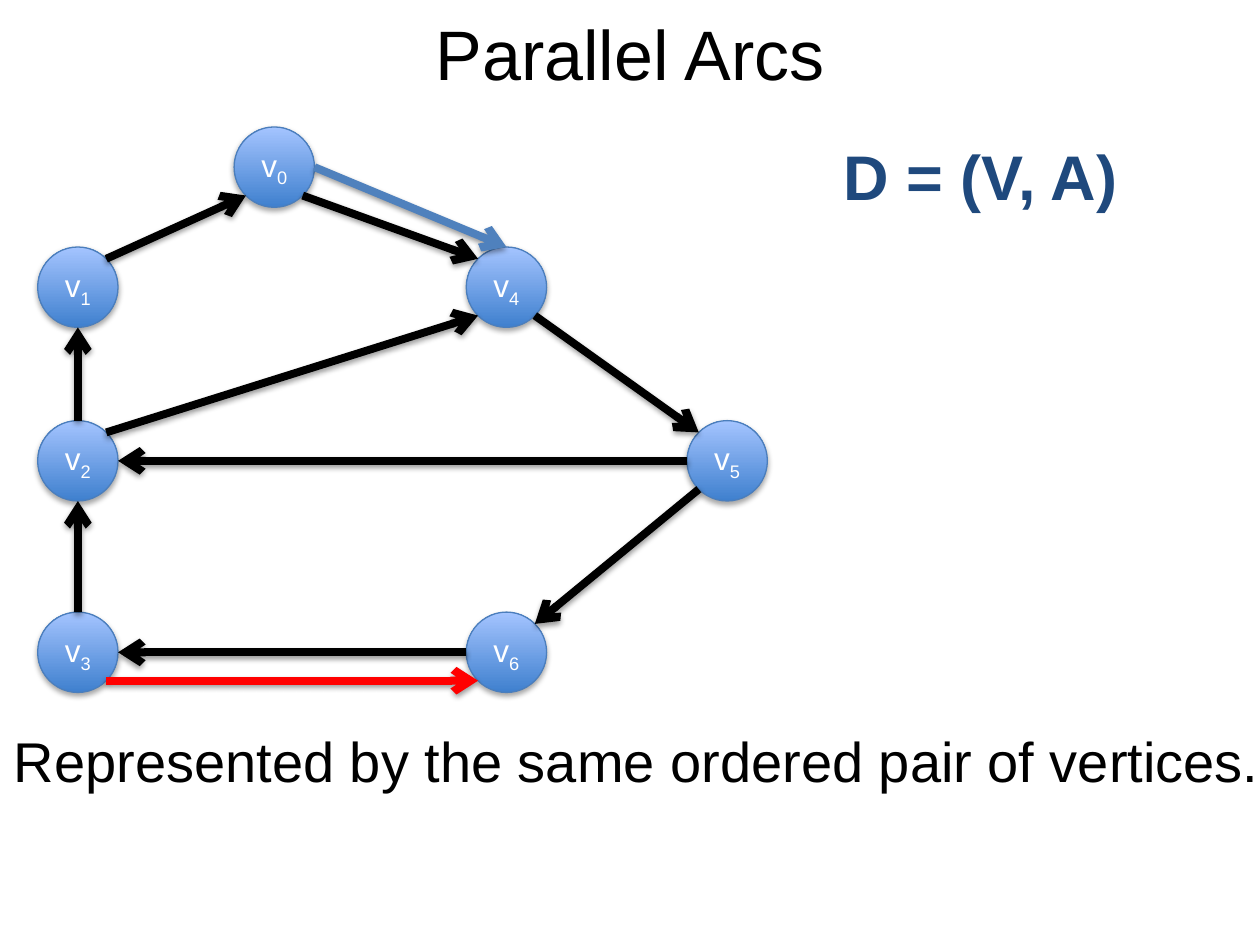
"""Build a slide that shows parallel arcs in a directed graph."""
import math

import lxml.etree
import pptx
import pptx.dml.color
import pptx.enum.shapes
import pptx.enum.text
import pptx.oxml.ns
import pptx.util

Cm = pptx.util.Cm
Pt = pptx.util.Pt
ALIGN = pptx.enum.text.PP_ALIGN
ANCHOR = pptx.enum.text.MSO_ANCHOR
AUTO_SIZE = pptx.enum.text.MSO_AUTO_SIZE

COLORS = {
    "text": "000000",
    "formula": "1F497D",
    "node_text": "FFFFFF",
    "node_bottom": "3F80CE",
    "node_top": "A4C4FF",
    "node_line": "4B7EBC",
    "arc": "000000",
    "parallel_arc": "4F81BD",
    "opposite_arc": "FF0000",
}
DIAMETER = 1.62
NODES = {
    "1": (0.76, 4.98),
    "0": (4.72, 2.56),
    "2": (0.76, 8.48),
    "6": (9.4, 12.34),
    "4": (9.4, 4.98),
    "5": (13.85, 8.48),
    "3": (0.76, 12.34),
}
DIRECTIONS = {"E": 0, "SE": 45, "S": 90, "SW": 135, "W": 180, "NW": 225, "N": 270, "NE": 315}
ARCS = [
    ("0", "SE", "4", "NW", "arc"),
    ("4", "SE", "5", "NW", "arc"),
    ("5", "W", "2", "E", "arc"),
    ("2", "NE", "4", "SW", "arc"),
    ("2", "N", "1", "S", "arc"),
    ("1", "NE", "0", "SW", "arc"),
    ("5", "SW", "6", "NE", "arc"),
    ("6", "W", "3", "E", "arc"),
    ("3", "N", "2", "S", "arc"),
    ("0", "E", "4", "N", "parallel_arc"),
    ("3", "SE", "6", "SW", "opposite_arc"),
]


def rgb(name):
    """Return the named colour."""
    return pptx.dml.color.RGBColor.from_string(COLORS[name])


def apply_format(target, values):
    """Set each attribute in values on the target."""
    for name, value in values.items():
        setattr(target, name, value)


def rim_point(node, direction):
    """Return the point on the rim of a node in a compass direction."""
    left, top = NODES[node]
    angle = math.radians(DIRECTIONS[direction])
    radius = DIAMETER / 2
    return Cm(left + radius + radius * math.cos(angle)), Cm(top + radius + radius * math.sin(angle))


class GraphSlide:
    """Hold the style and the slide being drawn."""

    font_name = "Arial"

    def __init__(self, slide):
        """Keep the slide to draw on."""
        self.slide = slide

    def add_run(self, paragraph, text, color, **values):
        """Add a formatted run to the paragraph."""
        run = paragraph.add_run()
        run.text = text
        apply_format(run.font, {"name": self.font_name, **values})
        run.font.color.rgb = rgb(color)
        return run

    def add_shadow(self, shape, distance, opacity):
        """Give the shape a soft shadow below it."""
        shape.shadow.inherit = False
        effects = shape._element.spPr.find(pptx.oxml.ns.qn("a:effectLst"))
        self.fill_shadow(effects, distance, opacity)

    def fill_shadow(self, effects, distance, opacity):
        """Write an outer shadow into an effect list."""
        qn = pptx.oxml.ns.qn
        shadow = lxml.etree.SubElement(
            effects, qn("a:outerShdw"), blurRad="40000", dist=str(distance), dir="5400000", rotWithShape="0")
        color = lxml.etree.SubElement(shadow, qn("a:srgbClr"), val="000000")
        lxml.etree.SubElement(color, qn("a:alpha"), val=str(opacity * 1000))

    def set_title(self, text):
        """Place and format the title."""
        shape = self.slide.shapes.title
        apply_format(shape, {"left": Cm(1.27), "top": Cm(0.15), "width": Cm(22.86), "height": Cm(1.8)})
        apply_format(shape.text_frame, {"vertical_anchor": ANCHOR.MIDDLE, "auto_size": AUTO_SIZE.NONE})
        paragraph = shape.text_frame.paragraphs[0]
        paragraph.alignment = ALIGN.CENTER
        self.add_run(paragraph, text, "text", size=Pt(40))

    def add_label(self, text, left, top, width, height, color, **values):
        """Add a single line of text."""
        shape = self.slide.shapes.add_textbox(Cm(left), Cm(top), Cm(width), Cm(height))
        apply_format(shape.text_frame, {"word_wrap": False, "auto_size": AUTO_SIZE.SHAPE_TO_FIT_TEXT})
        self.add_run(shape.text_frame.paragraphs[0], text, color, **values)

    def add_node(self, number):
        """Add a vertex with its subscripted name."""
        left, top = NODES[number]
        shape = self.slide.shapes.add_shape(
            pptx.enum.shapes.MSO_SHAPE.OVAL, Cm(left), Cm(top), Cm(DIAMETER), Cm(DIAMETER))
        shape.fill.gradient()
        shape.fill.gradient_angle = 90
        for stop, color in zip(shape.fill.gradient_stops, ("node_bottom", "node_top")):
            stop.color.rgb = rgb(color)
        shape.line.color.rgb = rgb("node_line")
        shape.line.width = Pt(0.75)
        self.add_shadow(shape, 23000, 35)
        shape.text_frame.vertical_anchor = ANCHOR.MIDDLE
        paragraph = shape.text_frame.paragraphs[0]
        paragraph.alignment = ALIGN.CENTER
        self.add_run(paragraph, "v", "node_text", size=Pt(18))
        subscript = self.add_run(paragraph, number, "node_text", size=Pt(18))
        subscript._r.get_or_add_rPr().set("baseline", "-25000")

    def add_arc(self, start, start_side, end, end_side, color):
        """Add an arrow from one vertex to another."""
        connector = self.slide.shapes.add_connector(
            pptx.enum.shapes.MSO_CONNECTOR.STRAIGHT,
            *rim_point(start, start_side), *rim_point(end, end_side))
        connector.line.color.rgb = rgb(color)
        connector.line.width = Pt(4.5)
        qn = pptx.oxml.ns.qn
        lxml.etree.SubElement(connector.line._get_or_add_ln(), qn("a:tailEnd"), type="arrow")
        effects = lxml.etree.SubElement(connector._element.spPr, qn("a:effectLst"))
        self.fill_shadow(effects, 20000, 38)


def main():
    """Create and save the presentation."""
    presentation = pptx.Presentation()
    apply_format(presentation, {"slide_width": Cm(25.4), "slide_height": Cm(19.05)})
    graph = GraphSlide(presentation.slides.add_slide(presentation.slide_layouts[5]))
    graph.set_title("Parallel Arcs")
    graph.add_label("Represented by the same ordered pair of vertices.",
                    0.03, 14.53, 25.86, 1.63, "text", size=Pt(32))
    for number in NODES:
        graph.add_node(number)
    for arc in ARCS:
        graph.add_arc(*arc)
    graph.add_label("D = (V, A)", 16.76, 2.64, 6.12, 1.8, "formula", size=Pt(36), bold=True)
    presentation.save("out.pptx")


if __name__ == "__main__":
    main()
